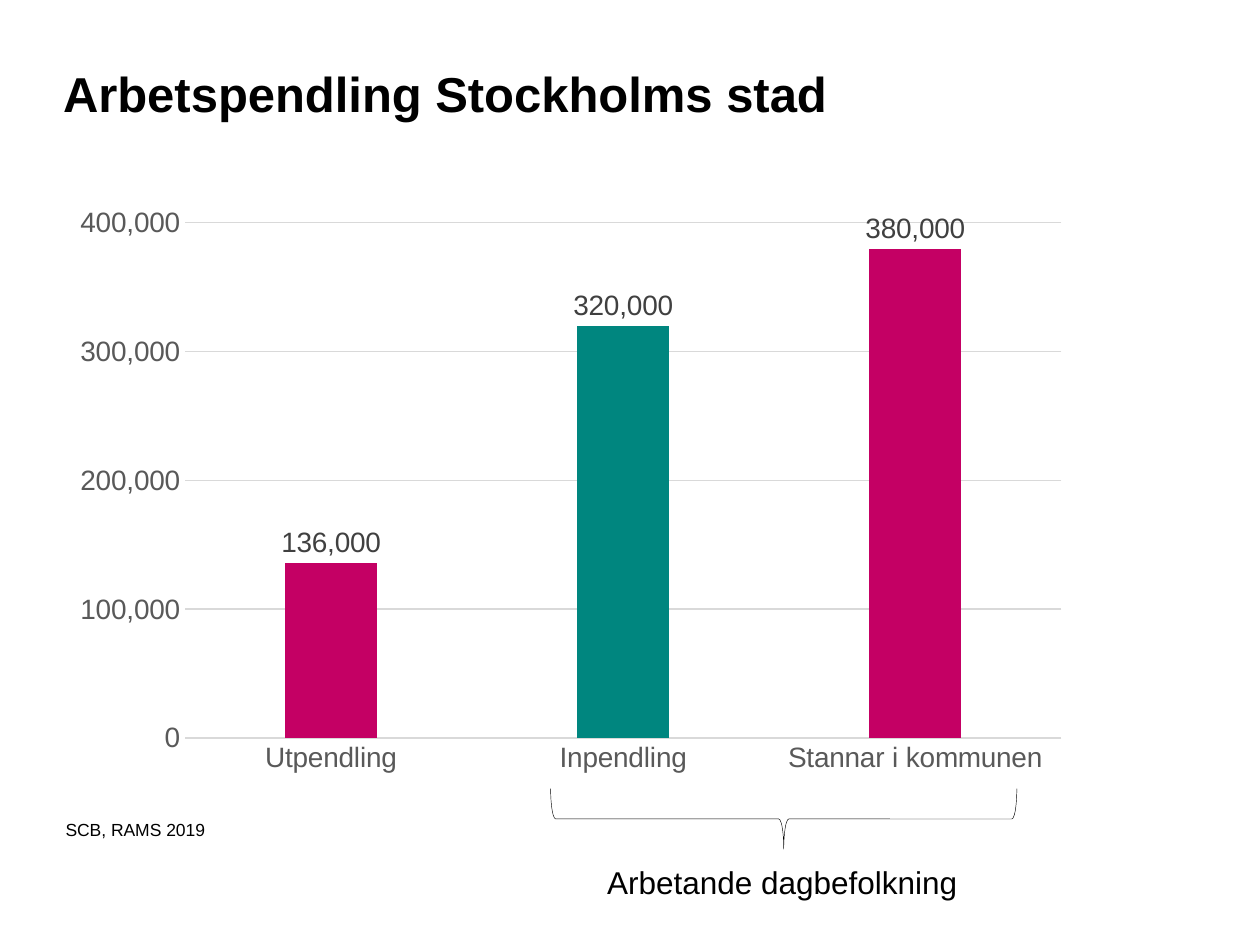
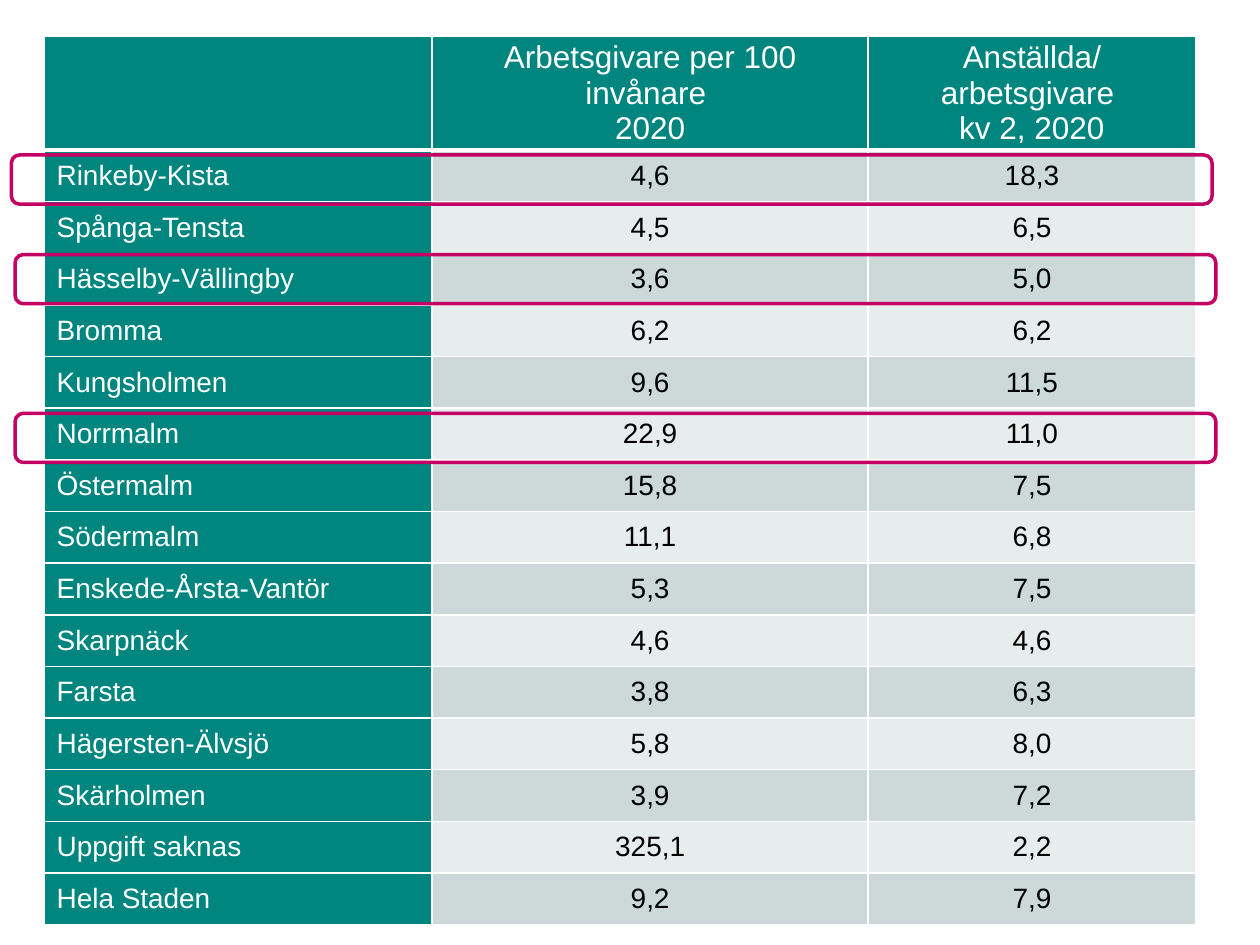
from lxml import etree
from pptx import Presentation
from pptx import util as u
from pptx.chart.data import CategoryChartData
from pptx.dml.color import RGBColor
from pptx.enum import chart as ce
from pptx.enum import shapes, text
from pptx.oxml import parse_xml
from pptx.oxml.ns import nsdecls, qn

TEAL = RGBColor(0x00, 0x86, 0x7F)
PINK = RGBColor(0xC4, 0x00, 0x64)
BLACK = RGBColor(0x00, 0x00, 0x00)
WHITE = RGBColor(0xFF, 0xFF, 0xFF)
DARK = RGBColor(0x40, 0x40, 0x40)
GREY = RGBColor(0x59, 0x59, 0x59)
PALE = RGBColor(0xD9, 0xD9, 0xD9)
BANDS = (RGBColor(0xCC, 0xD9, 0xD8), RGBColor(0xE7, 0xED, 0xEC))
FONT = "Arial"
LEFT, MID = text.PP_ALIGN.LEFT, text.PP_ALIGN.CENTER

HEADS = ("", "Arbetsgivare per 100 invånare \n2020",
         "Anställda/ arbetsgivare \nkv 2, 2020")
AREAS = (
    ("Rinkeby-Kista", "4,6", "18,3"),
    ("Spånga-Tensta", "4,5", "6,5"),
    ("Hässelby-Vällingby", "3,6", "5,0"),
    ("Bromma", "6,2", "6,2"),
    ("Kungsholmen", "9,6", "11,5"),
    ("Norrmalm", "22,9", "11,0"),
    ("Östermalm", "15,8", "7,5"),
    ("Södermalm", "11,1", "6,8"),
    ("Enskede-Årsta-Vantör", "5,3", "7,5"),
    ("Skarpnäck", "4,6", "4,6"),
    ("Farsta", "3,8", "6,3"),
    ("Hägersten-Älvsjö", "5,8", "8,0"),
    ("Skärholmen", "3,9", "7,2"),
    ("Uppgift saknas", "325,1", "2,2"),
    ("Hela Staden", "9,2", "7,9"),
)


def style(font, size, color, bold=False):
    font.name, font.size, font.bold = FONT, u.Pt(size), bold
    font.color.rgb = color


def write(frame, words, size=18, color=BLACK, bold=False, align=LEFT, after=0):
    para = frame.paragraphs[0]
    para.text = words
    para.alignment = align
    para.space_after = u.Pt(after)
    for run in para.runs:
        style(run.font, size, color, bold)
    return para


def inset(item, side, top):
    item.margin_left = item.margin_right = u.Inches(side)
    item.margin_top = item.margin_bottom = u.Inches(top)


def border(cell, top, bottom):
    props = cell._tc.get_or_add_tcPr()
    for side, width in zip("LRTB", (1, 1, top, bottom)):
        props.append(parse_xml(
            f'<a:ln{side} {nsdecls("a")} w="{u.Pt(width)}"><a:solidFill>'
            f'<a:srgbClr val="{WHITE}"/></a:solidFill></a:ln{side}>'))


class Deck:
    def __init__(self):
        self.prs = Presentation()
        self.prs.slide_width = u.Inches(10)
        self.prs.slide_height = u.Inches(7.5)
        self.slide = None

    def page(self, layout):
        self.slide = self.prs.slides.add_slide(self.prs.slide_layouts[layout])

    def holder(self, idx, words, box, **look):
        item = self.slide.placeholders[idx]
        item.left, item.top, item.width, item.height = map(u.Inches, box)
        frame = item.text_frame
        inset(frame, 0, 0)
        frame.auto_size = text.MSO_AUTO_SIZE.NONE
        frame.vertical_anchor = text.MSO_ANCHOR.TOP
        props = write(frame, words, **look)._p.get_or_add_pPr()
        props.set("marL", "0")
        props.set("indent", "0")
        etree.SubElement(props, qn("a:buNone"))

    def label(self, words, box, **look):
        frame = self.slide.shapes.add_textbox(*map(u.Inches, box)).text_frame
        frame.word_wrap = False
        frame.auto_size = text.MSO_AUTO_SIZE.SHAPE_TO_FIT_TEXT
        write(frame, words, **look)

    def outline(self, kind, box, color, width, turn=0):
        item = self.slide.shapes.add_shape(kind, *map(u.Inches, box))
        item.shadow.inherit = False
        item.fill.background()
        item.line.color.rgb = color
        item.line.width = u.Pt(width)
        item.rotation = turn

    def columns(self, names, values, marks, box):
        data = CategoryChartData(number_format="#,##0")
        data.categories = names
        data.add_series("Series 1", values)
        chart = self.slide.shapes.add_chart(
            ce.XL_CHART_TYPE.COLUMN_CLUSTERED, *map(u.Inches, box), data).chart
        style(chart.font, 16, BLACK)
        chart.has_legend = chart.has_title = False
        for axis in (chart.category_axis, chart.value_axis):
            axis.major_tick_mark = axis.minor_tick_mark = ce.XL_TICK_MARK.NONE
            style(axis.tick_labels.font, 16, GREY)
        scale = chart.value_axis
        scale.minimum_scale, scale.maximum_scale = 0, 400000
        scale.major_unit = 100000
        scale.tick_labels.number_format = "#,##0"
        scale.tick_labels.number_format_is_linked = False
        scale.format.line.fill.background()
        for line in (chart.category_axis.format.line,
                     scale.major_gridlines.format.line):
            line.color.rgb = PALE
            line.width = u.Pt(0.75)
        plot = chart.plots[0]
        plot.gap_width, plot.overlap = 219, -27
        plot.vary_by_categories = False
        plot.has_data_labels = True
        tags = plot.data_labels
        tags.show_value = True
        tags.number_format, tags.number_format_is_linked = "#,##0", False
        tags.position = ce.XL_LABEL_POSITION.OUTSIDE_END
        style(tags.font, 16, DARK)
        bars = plot.series[0]
        bars.invert_if_negative = False
        fills = [bars.format.fill]
        fills += [bars.points[i].format.fill for i in marks]
        for fill, color in zip(fills, [TEAL] + [PINK] * len(marks)):
            fill.solid()
            fill.fore_color.rgb = color
        self.place(chart, 0.122, 0.043, 0.876, 0.885)

    def place(self, chart, *spots):
        area = chart._chartSpace.chart.plotArea
        for old in area.findall(qn("c:layout")):
            area.remove(old)
        parts = [("layoutTarget", "inner"), ("xMode", "edge"), ("yMode", "edge")]
        parts += zip("xywh", spots)
        inner = "".join(f'<c:{tag} val="{val}"/>' for tag, val in parts)
        area.insert(0, parse_xml(
            f'<c:layout {nsdecls("c")}><c:manualLayout>{inner}'
            '</c:manualLayout></c:layout>'))

    def table(self, heads, rows, box, widths, tall, step):
        grid = self.slide.shapes.add_table(
            len(rows) + 1, len(heads), *map(u.Inches, box)).table
        for col, width in zip(grid.columns, widths):
            col.width = u.Inches(width)
        for r, words in enumerate((heads, *rows)):
            grid.rows[r].height = u.Inches(step if r else tall)
            for c, word in enumerate(words):
                cell = grid.cell(r, c)
                border(cell, 3 if r == 1 else 1, 1 if r else 3)
                edge = r == 0 or c == 0
                cell.fill.solid()
                cell.fill.fore_color.rgb = TEAL if edge else BANDS[(r - 1) % 2]
                cell.vertical_anchor = text.MSO_ANCHOR.MIDDLE
                if r == 0:
                    inset(cell, 0.07, 0)
                write(cell.text_frame, word, size=16 if r else 18,
                      color=WHITE if edge else BLACK,
                      align=MID if c else LEFT, after=0 if r else 6)


def commute(deck):
    deck.page(1)
    deck.holder(0, "Arbetspendling Stockholms stad", (0.5, 0.5, 9, 0.91),
                size=28, bold=True)
    deck.columns(("Utpendling", "Inpendling", "Stannar i kommunen"),
                 (136000, 320000, 380000), (0, 2), (0.5, 1.57, 7.94, 4.62))
    deck.holder(1, "SCB, RAMS 2019", (0.52, 6.5, 7.96, 0.2), size=10, after=6)
    deck.outline(shapes.MSO_SHAPE.RIGHT_BRACE, (5.98, 4.65, 0.48, 3.7),
                 BLACK, 0.25, turn=90)
    deck.label("Arbetande dagbefolkning", (4.72, 6.8, 3.01, 0.4))


def firms(deck):
    deck.page(6)
    deck.table(HEADS, AREAS, (0.35, 0.29, 9.15, 7.06), (3.08, 3.46, 2.6),
               0.89, 0.41)
    for left, top in ((0.12, 2.02), (0.12, 3.28), (0.09, 1.23)):
        deck.outline(shapes.MSO_SHAPE.ROUNDED_RECTANGLE,
                     (left, top, 9.53, 0.39), PINK, 2)


def main():
    deck = Deck()
    commute(deck)
    firms(deck)
    deck.prs.save("out.pptx")


if __name__ == "__main__":
    main()
